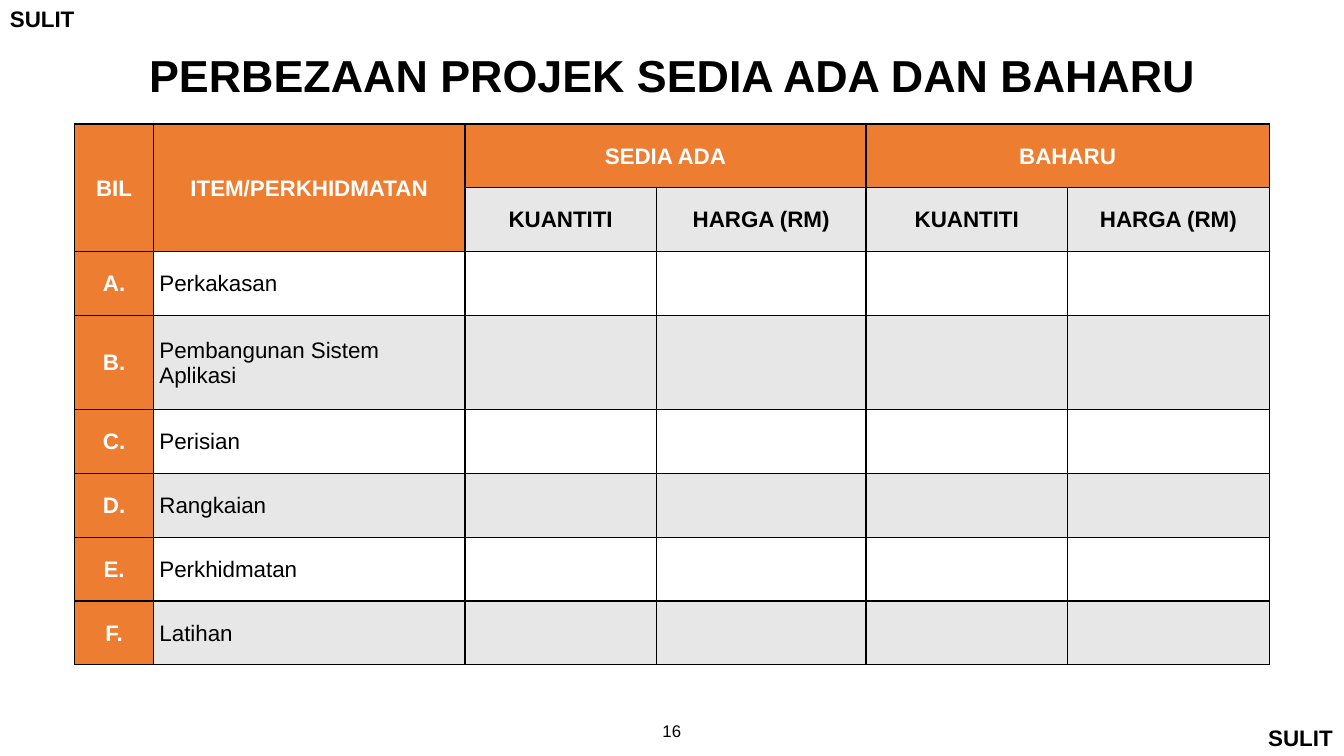
from lxml import etree
from pptx import Presentation
from pptx.dml.color import RGBColor
from pptx.enum.text import MSO_ANCHOR, PP_ALIGN
from pptx.oxml.ns import qn
from pptx.util import Pt

LEFT, MID = PP_ALIGN.LEFT, PP_ALIGN.CENTER
CENTER = MSO_ANCHOR.MIDDLE
BLACK = RGBColor(0x00, 0x00, 0x00)
WHITE = RGBColor(0xFF, 0xFF, 0xFF)
ORANGE = RGBColor(0xED, 0x7D, 0x31)
GREY = RGBColor(0xE7, 0xE7, 0xE7)


def write(frame, text, align, size, color, bold):
    par = frame.paragraphs[0]
    par.alignment = align
    run = par.add_run()
    run.text = text
    form = {"name": "Arial", "size": Pt(size), "bold": bold}
    for key, value in form.items():
        setattr(run.font, key, value)
    run.font.color.rgb = color
    return par


def border(cell, side, width):
    props = cell._tc.get_or_add_tcPr()
    line = etree.SubElement(props, qn("a:ln" + side), w=str(Pt(width)))
    fill = etree.SubElement(line, qn("a:solidFill"))
    etree.SubElement(fill, qn("a:srgbClr"), val=str(BLACK))


deck = Presentation()
deck.slide_width, deck.slide_height = Pt(960), Pt(540)
slide = deck.slides.add_slide(deck.slide_layouts[6])

labels = [
    ("SULIT", 0, 0, 61.2, 26.6, LEFT, 16, True, False),
    ("SULIT", 898.8, 513.4, 61.2, 26.6, LEFT, 16, True, False),
    ("PERBEZAAN PROJEK SEDIA ADA DAN BAHARU",
     95.8, 34.5, 769, 42.5, MID, 32, True, False),
    ("16", 460.8, 511.2, 38.2, 28.8, MID, 12, False, True),
]
for text, x, y, w, h, align, size, bold, wrap in labels:
    frame = slide.shapes.add_textbox(Pt(x), Pt(y), Pt(w), Pt(h)).text_frame
    frame.word_wrap = wrap
    par = write(frame, text, align, size, BLACK, bold)
    if size == 32:
        frame.vertical_anchor = CENTER
        par.line_spacing = 0.9

items = ["Perkakasan", "Pembangunan Sistem Aplikasi", "Perisian",
         "Rangkaian", "Perkhidmatan", "Latihan"]
rows = [
    ["BIL", "ITEM/PERKHIDMATAN", "SEDIA ADA", "", "BAHARU", ""],
    ["", ""] + ["KUANTITI", "HARGA (RM)"] * 2,
]
for letter, item in zip("ABCDEF", items):
    rows.append([letter + ".", item, "", "", "", ""])
widths = [56.2, 222.5, 136.8, 149.7, 144, 144]
heights = [45.6] * 3 + [67.2] + [45.6] * 4

table = slide.shapes.add_table(
    len(rows), len(widths), Pt(53.4), Pt(88.6),
    Pt(sum(widths)), Pt(sum(heights))).table
for col, width in zip(table.columns, widths):
    col.width = Pt(width)
for row, height in zip(table.rows, heights):
    row.height = Pt(height)

inset = {"margin_left": Pt(4.3), "margin_right": Pt(4.3),
         "margin_top": Pt(0.7), "margin_bottom": Pt(0),
         "vertical_anchor": CENTER}
for r, texts in enumerate(rows):
    for c, text in enumerate(texts):
        cell = table.cell(r, c)
        for side in "LRTB":
            border(cell, side, 2 if side == "T" and r == 0 and c > 1 else 1)
        for key, value in inset.items():
            setattr(cell, key, value)
        head = r < 2
        strong = r == 0 or c == 0 or (r == 1 and c == 1)
        cell.fill.solid()
        cell.fill.fore_color.rgb = (
            ORANGE if strong else GREY if r % 2 else WHITE)
        if text:
            par = write(cell.text_frame, text, MID if head or c == 0 else LEFT,
                        16, WHITE if strong else BLACK, head or c == 0)
            if head:
                par.space_after = Pt(10)

for c in (0, 1):
    table.cell(0, c).merge(table.cell(1, c))
for c in (2, 4):
    table.cell(0, c).merge(table.cell(0, c + 1))

deck.save("out.pptx")
